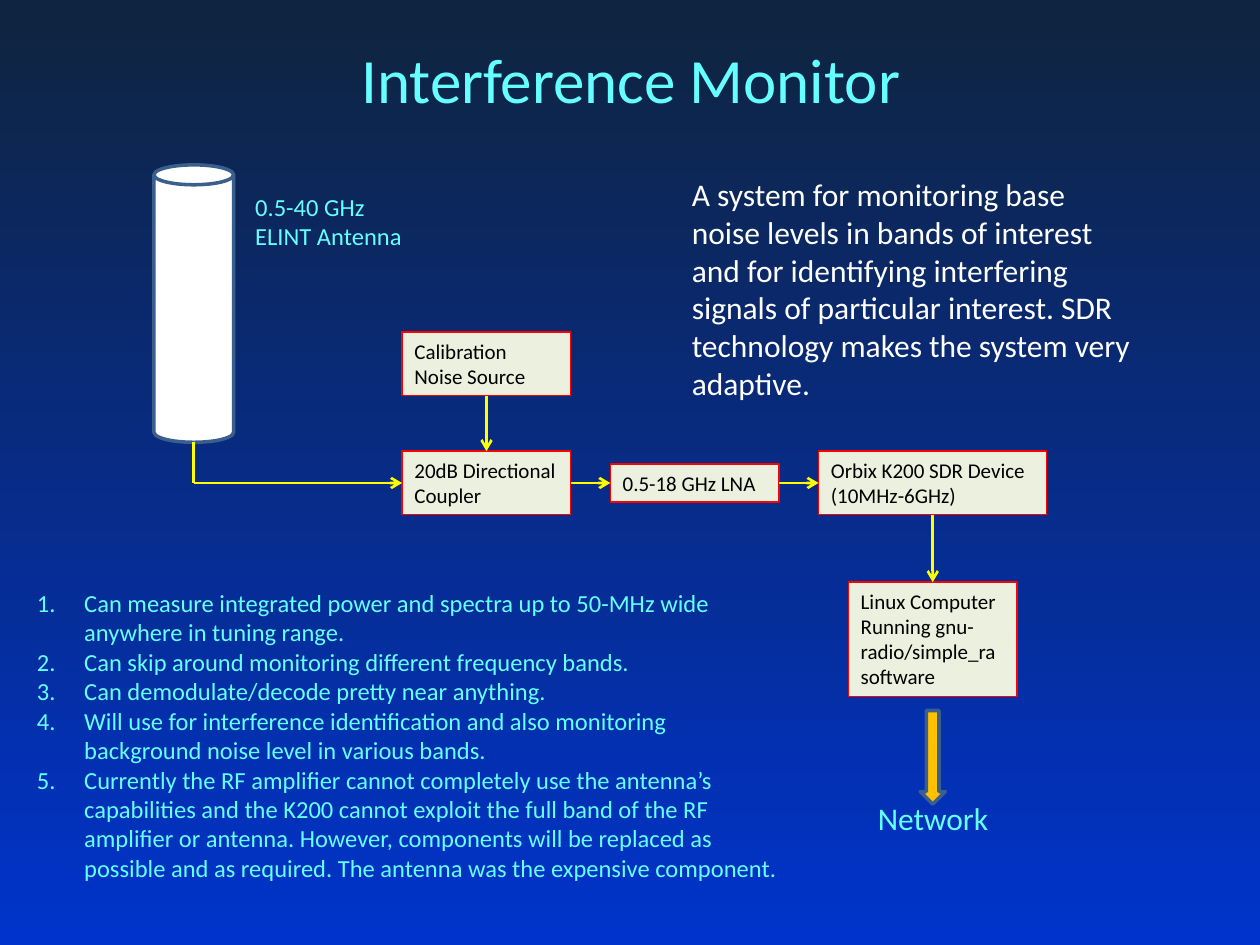
from dataclasses import dataclass

from lxml import etree
from pptx import Presentation
from pptx.dml.color import RGBColor
from pptx.enum.shapes import MSO_CONNECTOR, MSO_SHAPE
from pptx.enum.text import MSO_ANCHOR, MSO_AUTO_SIZE, PP_ALIGN
from pptx.oxml.ns import qn
from pptx.util import Pt

STRAIGHT = MSO_CONNECTOR.STRAIGHT
RECTANGLE, CAN, DOWN_ARROW = MSO_SHAPE.RECTANGLE, MSO_SHAPE.CAN, MSO_SHAPE.DOWN_ARROW
LEFT, CENTER = PP_ALIGN.LEFT, PP_ALIGN.CENTER
TOP, MIDDLE = MSO_ANCHOR.TOP, MSO_ANCHOR.MIDDLE
GROW = MSO_AUTO_SIZE.SHAPE_TO_FIT_TEXT

# Connection sites of a rectangle
SITE_TOP, SITE_LEFT, SITE_BOTTOM, SITE_RIGHT = range(4)


@dataclass(frozen=True)
class Theme:
    font: str = "Calibri"
    background_top: str = "0F243E"
    background_bottom: str = "0033CC"
    accent: str = "66FFFF"
    white: str = "FFFFFF"
    black: str = "000000"
    block_fill: str = "EBF1DE"
    block_line: str = "FF0000"
    outline: str = "3A5F8C"
    signal: str = "FFFF00"
    network: str = "FFC000"
    title_size: float = 36
    body_size: float = 18
    note_size: float = 14
    block_size: float = 12


THEME = Theme()

# Shared axes of the signal chain, in points
CHAIN_Y = 276
ANTENNA_X, COUPLER_X, AMPLIFIER_X, RECEIVER_X = 110.75, 278, 397, 533
BLOCK_WIDTH = 96.5
LIST_INDENT = 27

CAPABILITIES = [
    "Can measure integrated power and spectra up to 50-MHz wide anywhere in tuning range.",
    "Can skip around monitoring different frequency bands.",
    "Can demodulate/decode pretty near anything.",
    "Will use for interference identification and also monitoring background noise level "
    "in various bands.",
    "Currently the RF amplifier cannot completely use the antenna’s capabilities and the "
    "K200 cannot exploit the full band of the RF amplifier or antenna. However, components "
    "will be replaced as possible and as required. The antenna was the expensive component.",
]
PURPOSE = (
    "A system for monitoring base noise levels in bands of interest and for identifying "
    "interfering signals of particular interest. SDR technology makes the system very adaptive."
)


def color(value):
    return RGBColor.from_string(value)


def set_background(slide):
    fill = slide.background.fill
    fill.gradient()
    fill.gradient_angle = 270
    stops = (THEME.background_top, THEME.background_bottom)
    for position, (stop, value) in enumerate(zip(fill.gradient_stops, stops)):
        stop.position = position
        stop.color.rgb = color(value)


def write_text(shape, text, size, text_color, align=LEFT, anchor=TOP, auto_size=GROW):
    text_frame = shape.text_frame
    text_frame.text = text
    text_frame.word_wrap = True
    text_frame.auto_size = auto_size
    text_frame.vertical_anchor = anchor
    for paragraph in text_frame.paragraphs:
        paragraph.alignment = align
        for run in paragraph.runs:
            run.font.name = THEME.font
            run.font.size = Pt(size)
            run.font.color.rgb = color(text_color)


def add_text(slide, box, text, size, text_color, **layout):
    shape = slide.shapes.add_textbox(*map(Pt, box))
    write_text(shape, text, size, text_color, **layout)
    return shape


def add_numbered_list(slide, box, items):
    shape = add_text(slide, box, "\n".join(items), THEME.note_size, THEME.accent)
    for paragraph in shape.text_frame.paragraphs:
        properties = paragraph._p.get_or_add_pPr()
        properties.set("marL", str(Pt(LIST_INDENT)))
        properties.set("indent", str(Pt(-LIST_INDENT)))
        etree.SubElement(properties, qn("a:buAutoNum"), type="arabicPeriod")


def add_figure(slide, kind, center_x, center_y, width, height, fill, line, line_width):
    box = (center_x - width / 2, center_y - height / 2, width, height)
    shape = slide.shapes.add_shape(kind, *map(Pt, box))
    shape.shadow.inherit = False
    shape.fill.solid()
    shape.fill.fore_color.rgb = color(fill)
    shape.line.color.rgb = color(line)
    shape.line.width = Pt(line_width)
    return shape


def add_block(slide, text, center_x, center_y, height, width=BLOCK_WIDTH):
    shape = add_figure(slide, RECTANGLE, center_x, center_y, width, height,
                       THEME.block_fill, THEME.block_line, 0.75)
    write_text(shape, text, THEME.block_size, THEME.black)
    return shape


def add_signal(slide, start=(0, 0), end=(0, 0), arrow=True):
    connector = slide.shapes.add_connector(STRAIGHT, *map(Pt, (*start, *end)))
    connector.line.color.rgb = color(THEME.signal)
    connector.line.width = Pt(1.5)
    if arrow:
        etree.SubElement(connector.line._get_or_add_ln(), qn("a:tailEnd"), type="arrow")
    etree.SubElement(connector._element.spPr, qn("a:effectLst"))
    return connector


def link_blocks(slide, source, source_site, target, target_site):
    connector = add_signal(slide)
    connector.begin_connect(source, source_site)
    connector.end_connect(target, target_site)


def add_signal_chain(slide):
    # Antenna and processing blocks
    add_figure(slide, CAN, ANTENNA_X, 173.5, 45.5, 158.5, THEME.white, THEME.outline, 2)
    coupler = add_block(slide, "20dB Directional Coupler", COUPLER_X, CHAIN_Y, 36.4)
    calibration = add_block(slide, "Calibration Noise Source", COUPLER_X, 208, 36.4)
    amplifier = add_block(slide, "0.5-18 GHz LNA", AMPLIFIER_X, CHAIN_Y, 21.8)
    receiver = add_block(slide, "Orbix K200 SDR Device (10MHz-6GHz)",
                         RECEIVER_X, CHAIN_Y, 36.4, width=130.5)
    computer = add_block(slide, "Linux Computer Running gnu-radio/simple_ra software",
                         RECEIVER_X, 365.4, 65.5)

    # Antenna feed
    corner = (ANTENNA_X, CHAIN_Y)
    add_signal(slide, (ANTENNA_X, 252.75), corner, arrow=False)
    add_signal(slide, corner, (COUPLER_X - BLOCK_WIDTH / 2, CHAIN_Y))

    # Links between blocks
    link_blocks(slide, calibration, SITE_BOTTOM, coupler, SITE_TOP)
    link_blocks(slide, coupler, SITE_RIGHT, amplifier, SITE_LEFT)
    link_blocks(slide, amplifier, SITE_RIGHT, receiver, SITE_LEFT)
    link_blocks(slide, receiver, SITE_BOTTOM, computer, SITE_TOP)

    # Network output
    add_figure(slide, DOWN_ARROW, RECEIVER_X, 432.75, 14.4, 53.5,
               THEME.network, THEME.outline, 2)


def main():
    presentation = Presentation()
    presentation.slide_width, presentation.slide_height = Pt(720), Pt(540)
    slide = presentation.slides.add_slide(presentation.slide_layouts[6])
    set_background(slide)

    add_text(slide, (36.5, 0, 648, 90), "Interference Monitor", THEME.title_size,
             THEME.accent, align=CENTER, anchor=MIDDLE, auto_size=MSO_AUTO_SIZE.NONE)
    add_signal_chain(slide)

    # Labels and explanations
    add_text(slide, (494.5, 453, 79, 29), "Network", THEME.body_size, THEME.accent)
    add_text(slide, (138.75, 106, 99.5, 41), "0.5-40 GHz ELINT Antenna",
             THEME.note_size, THEME.accent)
    add_numbered_list(slide, (14, 332.5, 442, 177), CAPABILITIES)
    add_text(slide, (388.25, 96.5, 266.5, 138), PURPOSE, THEME.body_size, THEME.white)

    presentation.save("out.pptx")


if __name__ == "__main__":
    main()
